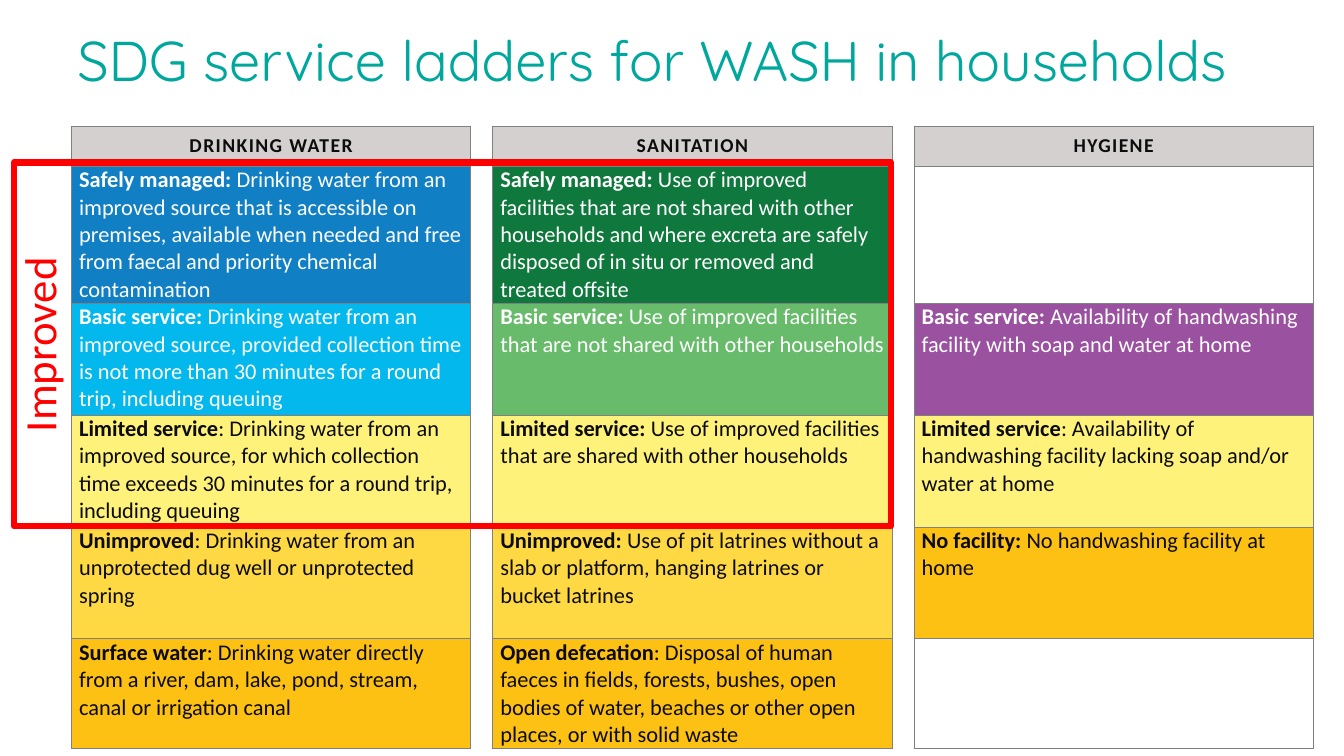
from lxml.etree import SubElement
from pptx import Presentation
from pptx.dml.color import RGBColor
from pptx.enum.shapes import MSO_SHAPE
from pptx.enum.text import MSO_ANCHOR, MSO_AUTO_SIZE, PP_ALIGN
from pptx.oxml.ns import qn
from pptx.util import Pt

INK, WHITE, GREY, RED = "0C0C0C", "FFFFFF", "808080", "FF0000"
HEADS = ["DRINKING WATER", "SANITATION", "HYGIENE"]
WIDTHS = [285.12, 15.84] * 2 + [285.12]
HEIGHTS = [28.8] + [79.92] * 4 + [72.72]
STEPS = [
    [("107FC4", "Safely managed: ", "Drinking water from an improved source that is accessible on premises, "
      "available when needed and free from faecal and priority chemical contamination"),
     ("0F783D", "Safely managed: ", "Use of improved facilities that are not shared with other households "
      "and where excreta are safely disposed of in situ or removed and treated offsite"),
     None],
    [("03B8ED", "Basic service:", " Drinking water from an improved source, provided collection time "
      "is not more than 30 minutes for a round trip, including queuing"),
     ("67BB6A", "Basic service:", " Use of improved facilities that are not shared with other households"),
     ("9A51A0", "Basic service:", " Availability of handwashing facility with soap and water at home")],
    [("FFF27A", "Limited service", ": Drinking water from an improved source, for which collection time "
      "exceeds 30 minutes for a round trip, including queuing"),
     ("FFF27A", "Limited service:", " Use of improved facilities that are shared with other households"),
     ("FFF27A", "Limited service", ": Availability of handwashing facility lacking soap and/or water at home")],
    [("FED943", "Unimproved", ": Drinking water from an unprotected dug well or unprotected spring"),
     ("FED943", "Unimproved: ", "Use of pit latrines without a slab or platform, hanging latrines "
      "or bucket latrines"),
     ("FDC113", "No facility:", " No handwashing facility at home")],
    [("FDC113", "Surface water", ": Drinking water directly from a river, dam, lake, pond, stream, "
      "canal or irrigation canal"),
     ("FDC113", "Open defecation", ": Disposal of human faeces in fields, forests, bushes, open bodies "
      "of water, beaches or other open places, or with solid waste"),
     None],
]


def style(item, form):
    """Set each format value on the item."""
    for name, value in form.items():
        setattr(item, name, value)


def tint(part, shade):
    """Give a fill or line format a solid colour."""
    part.solid()
    part.fore_color.rgb = RGBColor.from_string(shade)


def write(para, text, shade, size, face="Calibri", bold=False):
    """Add one formatted run to a paragraph."""
    run = para.add_run()
    run.text = text
    style(run.font, {"size": Pt(size), "name": face, "bold": bold})
    tint(run.font.fill, shade)
    return run


def place(shape, box):
    """Move a shape to left, top, width and height in points."""
    style(shape, dict(zip(("left", "top", "width", "height"), map(Pt, box))))


def paint(cell, shade, sides="LRTB"):
    """Fill a cell and draw thin borders on the given sides."""
    tint(cell.fill, shade)
    style(cell, {"margin_left": Pt(5.4), "margin_right": Pt(5.4),
                 "margin_top": 0, "margin_bottom": 0})
    props = cell._tc.get_or_add_tcPr()
    for spot, side in enumerate("LRTB"):
        line = SubElement(props, qn(f"a:ln{side}"), w=str(Pt(0.75)))
        if side in sides:
            SubElement(SubElement(line, qn("a:solidFill")), qn("a:srgbClr"), val=GREY)
        else:
            SubElement(line, qn("a:noFill"))
        props.insert(spot, line)


def add_title(slide, text):
    """Fill the title placeholder."""
    title = slide.shapes.title
    place(title, (48, 0, 864, 90))
    style(title.text_frame, {"word_wrap": True, "auto_size": MSO_AUTO_SIZE.NONE,
                             "vertical_anchor": MSO_ANCHOR.MIDDLE})
    para = title.text_frame.paragraphs[0]
    style(para, {"alignment": PP_ALIGN.LEFT, "line_spacing": 0.9})
    write(para, text, "00A79D", 40, "Quicksand")


def add_head(cell, text):
    """Write a column heading."""
    paint(cell, "D4D0CF")
    cell.vertical_anchor = MSO_ANCHOR.MIDDLE
    para = cell.text_frame.paragraphs[0]
    style(para, {"alignment": PP_ALIGN.CENTER, "space_after": Pt(10)})
    run = write(para, text, INK, 14, bold=True)
    run._r.get_or_add_rPr().set("spc", "100")


def add_step(cell, step, shade):
    """Write one rung of a ladder, or leave it blank."""
    if step is None:
        paint(cell, WHITE)
        return
    fill, name, body = step
    paint(cell, fill)
    para = cell.text_frame.paragraphs[0]
    para.space_after = Pt(6)
    write(para, name, shade, 16, bold=True)
    write(para, body, shade, 16)


def add_ladders(slide):
    """Build the table of three ladders with gaps between."""
    frame = slide.shapes.add_table(len(HEIGHTS), len(WIDTHS), Pt(51.12), Pt(90),
                                   Pt(sum(WIDTHS)), Pt(sum(HEIGHTS)))
    table = frame.table
    style(table, {"first_row": False, "horz_banding": False})
    for col, width in zip(table.columns, WIDTHS):
        col.width = Pt(width)
    for row, height in zip(table.rows, HEIGHTS):
        row.height = Pt(height)
        for gap in (1, 3):
            paint(row.cells[gap], WHITE, "LR")
    for col, head in enumerate(HEADS):
        add_head(table.cell(0, 2 * col), head)
    for row, steps in enumerate(STEPS, 1):
        for col, step in enumerate(steps):
            add_step(table.cell(row, 2 * col), step, WHITE if row < 3 else INK)


def add_frame(slide, box):
    """Draw the red outline."""
    frame = slide.shapes.add_shape(MSO_SHAPE.RECTANGLE, *map(Pt, box))
    frame.shadow.inherit = False
    frame.fill.background()
    tint(frame.line.fill, RED)
    frame.line.width = Pt(4.5)


def add_label(slide, text, box):
    """Add an upright red label."""
    label = slide.shapes.add_textbox(*map(Pt, box))
    label.rotation = 270
    style(label.text_frame, {"word_wrap": True, "auto_size": MSO_AUTO_SIZE.SHAPE_TO_FIT_TEXT})
    para = label.text_frame.paragraphs[0]
    para.alignment = PP_ALIGN.CENTER
    write(para, text, RED, 32)


def main():
    """Build and save the slide."""
    deck = Presentation()
    style(deck, {"slide_width": Pt(960), "slide_height": Pt(540)})
    slide = deck.slides.add_slide(deck.slide_layouts[5])
    add_title(slide, "SDG service ladders for WASH in households")
    add_ladders(slide)
    add_frame(slide, (10, 116, 626.4, 260))
    add_label(slide, "Improved", (-102.2, 223.2, 260, 46))
    deck.save("out.pptx")


if __name__ == "__main__":
    main()
